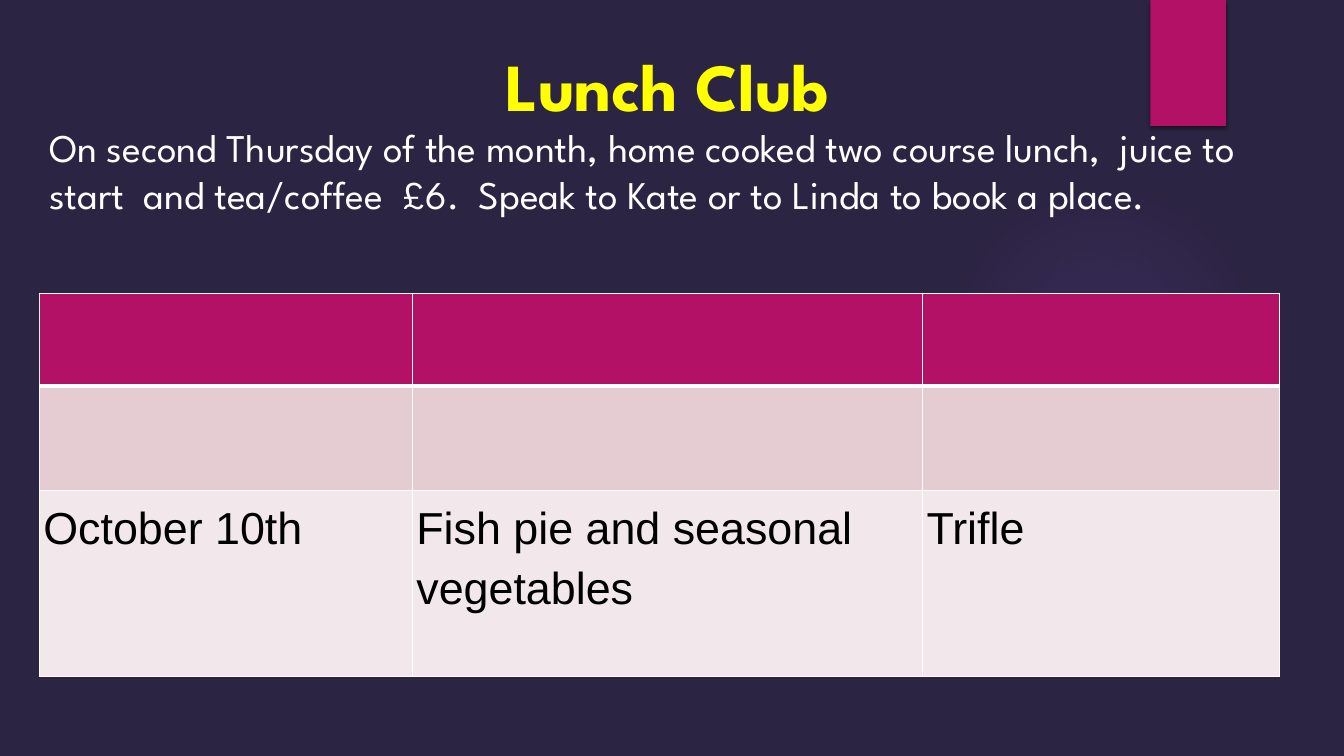
import pptx
import pptx.dml.color
import pptx.enum.shapes
import pptx.enum.text
import pptx.oxml
import pptx.oxml.ns
import pptx.util
from pptx.util import Inches

A = pptx.oxml.ns.nsdecls("a")
FONT = "League Spartan"
WHITE, YELLOW, PINK = "FFFFFF", "FFFF00", "B31166"


def rgb(value):
    return pptx.dml.color.RGBColor.from_string(value)


def xml(text):
    """Build an element, adding the drawing namespace to its root tag."""
    tag, rest = text.split(" ", 1)
    return pptx.oxml.parse_xml(f"{tag} {A} {rest}")


class Deck:
    def __init__(self, background):
        self.prs = pptx.Presentation()
        self.prs.slide_width, self.prs.slide_height = Inches(13.33), Inches(7.5)
        self.s = self.prs.slides.add_slide(self.prs.slide_layouts[5])
        fill = self.s.background.fill
        fill.solid()
        fill.fore_color.rgb = rgb(background)

    def shape(self, kind, box, color):
        sp = self.s.shapes.add_shape(kind, *map(Inches, box))
        sp.shadow.inherit = False
        sp.fill.solid()
        sp.fill.fore_color.rgb = rgb(color)
        sp.line.fill.background()
        return sp

    def glow(self, box, color, stops):
        """Ellipse that fades outwards; stops are (position, opacity) in percent."""
        sp = self.shape(pptx.enum.shapes.MSO_SHAPE.OVAL, box, color)
        gs = "".join(
            f'<a:gs pos="{pos * 1000}"><a:srgbClr val="{color}">'
            f'<a:alpha val="{alpha * 1000}"/></a:srgbClr></a:gs>'
            for pos, alpha in stops)
        grad = xml(f'<a:gradFill rotWithShape="1"><a:gsLst>{gs}</a:gsLst><a:path path="circle">'
                   '<a:fillToRect l="50000" t="50000" r="50000" b="50000"/></a:path></a:gradFill>')
        spPr = sp.element.spPr
        spPr.replace(spPr.find(pptx.oxml.ns.qn("a:solidFill")), grad)

    def ribbon(self, box, color):
        sp = self.shape(pptx.enum.shapes.MSO_SHAPE.RECTANGLE, box, color)
        sp.element.spPr.find(pptx.oxml.ns.qn("a:effectLst")).append(xml(
            '<a:outerShdw blurRad="38100" dist="25400" dir="5400000" rotWithShape="0">'
            '<a:srgbClr val="000000"><a:alpha val="45000"/></a:srgbClr></a:outerShdw>'))

    def style(self, p, size, color, font=FONT, bold=False):
        for r in p.runs:
            r.font.name, r.font.size, r.font.bold = font, pptx.util.Pt(size), bold
            r.font.color.rgb = rgb(color)

    def fill_text(self, sp, text, size, color, bold=False):
        tf = sp.text_frame
        tf.text = text
        tf.word_wrap = True
        tf.auto_size = pptx.enum.text.MSO_AUTO_SIZE.NONE
        tf.vertical_anchor = pptx.enum.text.MSO_ANCHOR.TOP
        self.style(tf.paragraphs[0], size, color, bold=bold)

    def title(self, box, text):
        sp = self.s.shapes.title
        sp.left, sp.top, sp.width, sp.height = map(Inches, box)
        self.fill_text(sp, text, 48, YELLOW, bold=True)
        sp.text_frame.paragraphs[0].alignment = pptx.enum.text.PP_ALIGN.CENTER

    def text(self, box, text):
        self.fill_text(self.s.shapes.add_textbox(*map(Inches, box)), text, 28, WHITE)

    def borders(self, cell, top, bottom):
        tcPr = cell._tc.get_or_add_tcPr()
        for side, width in (("L", 1), ("R", 1), ("T", top), ("B", bottom)):
            tcPr.append(xml(f'<a:ln{side} w="{width * 12700}"><a:solidFill>'
                            f'<a:srgbClr val="{WHITE}"/></a:solidFill></a:ln{side}>'))

    def table(self, left, top, widths, heights, fills, rows):
        frame = self.s.shapes.add_table(len(heights), len(widths), Inches(left), Inches(top),
                                        Inches(sum(widths)), Inches(sum(heights)))
        tbl = frame.table
        for col, width in zip(tbl.columns, widths):
            col.width = Inches(width)
        for i, (row, height, fill) in enumerate(zip(tbl.rows, heights, fills)):
            row.height = Inches(height)
            for cell, text in zip(row.cells, rows[i]):
                self.borders(cell, 3 if i == 1 else 1, 3 if i == 0 else 1)
                cell.fill.solid()
                cell.fill.fore_color.rgb = rgb(fill)
                if text:
                    self.cell_text(cell, text)

    def cell_text(self, cell, text):
        cell.margin_left = cell.margin_right = Inches(0.04)
        cell.margin_top = cell.margin_bottom = Inches(0.04)
        p = cell.text_frame.paragraphs[0]
        p.text = text
        p.line_spacing, p.space_after = 1.19, pptx.util.Pt(6)
        self.style(p, 32, "000000", "Arial")


def main():
    deck = Deck("2C2443")
    deck.glow((9.41, 1.83, 3.08, 3.08), "9B6BF2", [(0, 7), (36, 6), (69, 0), (100, 0)])
    deck.ribbon((11.41, 0, 0.75, 1.25), PINK)
    deck.title((0.39, 0.39, 12.46, 0.83), "Lunch Club")
    deck.text((0.39, 1.17, 12.46, 1.1),
              "On second Thursday of the month, home cooked two course lunch,  juice to start  "
              "and tea/coffee  £6.  Speak to Kate or to Linda to book a place.")
    blank = [""] * 3
    deck.table(0.39, 2.91, [3.7, 5.06, 3.54], [0.92, 1.04, 1.84], [PINK, "E5CCD3", "F2E7EA"],
               [blank, blank, ["October 10th", "Fish pie and seasonal vegetables", "Trifle"]])
    deck.prs.save("out.pptx")


if __name__ == "__main__":
    main()
